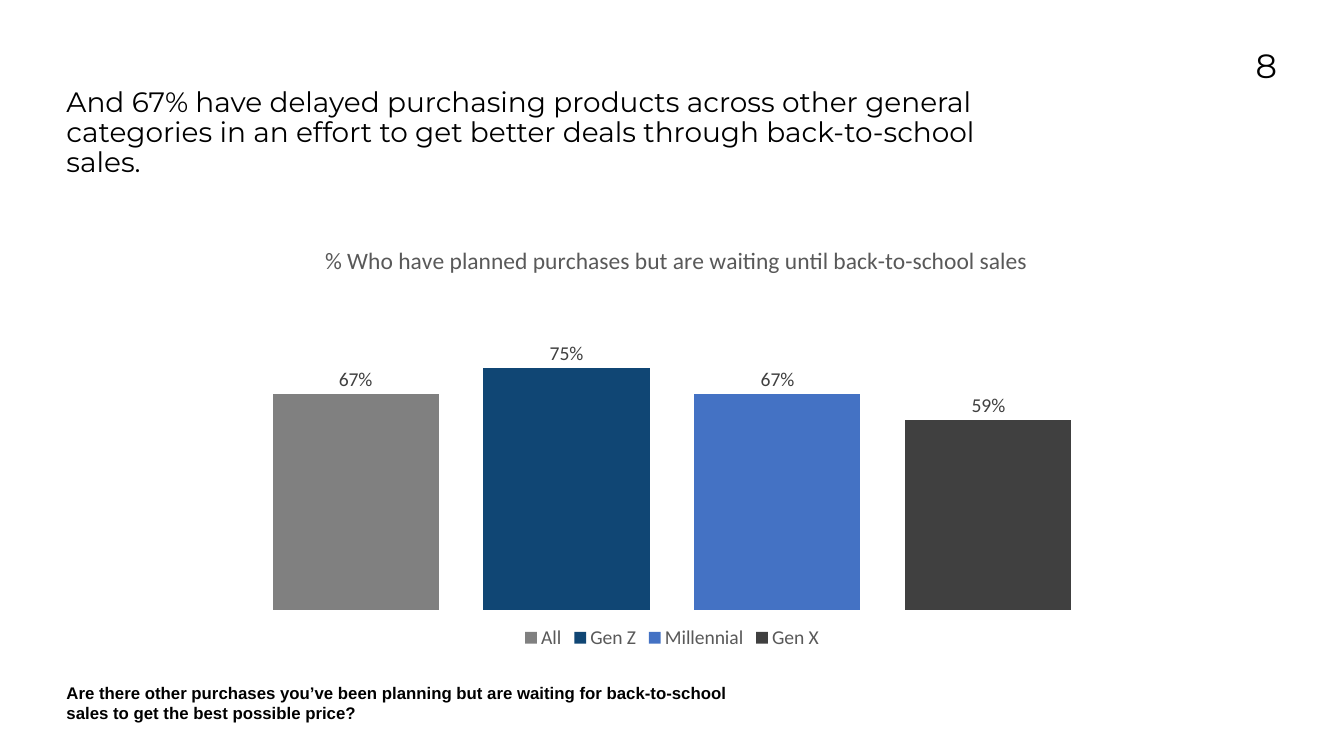
from dataclasses import dataclass

from lxml import etree
from pptx import Presentation
from pptx.chart.data import CategoryChartData
from pptx.dml.color import RGBColor
from pptx.enum.chart import XL_CHART_TYPE, XL_LABEL_POSITION, XL_LEGEND_POSITION
from pptx.enum.text import MSO_ANCHOR, MSO_AUTO_SIZE, PP_ALIGN
from pptx.oxml.ns import qn
from pptx.util import Cm, Pt

BLACK = RGBColor(0x00, 0x00, 0x00)
CHARCOAL = RGBColor(0x40, 0x40, 0x40)
TEXT_GRAY = RGBColor(0x59, 0x59, 0x59)
GRAY = RGBColor(0x80, 0x80, 0x80)
NAVY = RGBColor(0x10, 0x46, 0x74)
BLUE = RGBColor(0x44, 0x72, 0xC4)

MARGIN = 3.35


@dataclass
class Box:
    left: float
    top: float
    width: float
    height: float

    def lengths(self):
        return [Cm(v) for v in (self.left, self.top, self.width, self.height)]


@dataclass
class Group:
    name: str
    share: float
    color: RGBColor


GROUPS = [
    Group("All", 0.67, GRAY),
    Group("Gen Z", 0.75, NAVY),
    Group("Millennial", 0.67, BLUE),
    Group("Gen X", 0.59, CHARCOAL),
]


def set_font(font, color: RGBColor, **values) -> None:
    for name, value in values.items():
        setattr(font, name, value)
    font.color.rgb = color


def write_text(sp, box: Box, text: str, align=PP_ALIGN.LEFT, spacing=1.0, **font) -> None:
    sp.left, sp.top, sp.width, sp.height = box.lengths()
    tf = sp.text_frame
    frame_format = dict(
        margin_left=0, margin_top=0, margin_right=0, margin_bottom=0,
        word_wrap=True, auto_size=MSO_AUTO_SIZE.NONE, vertical_anchor=MSO_ANCHOR.TOP,
    )
    for name, value in frame_format.items():
        setattr(tf, name, value)
    p = tf.paragraphs[0]
    p.alignment, p.line_spacing = align, spacing
    r = p.add_run()
    r.text = text
    set_font(r.font, BLACK, **font)


def set_layout(parent, index: int, **values) -> None:
    """Place a chart part by hand, in fractions of the chart."""
    layout = parent.find(qn("c:layout"))
    if layout is None:
        layout = etree.Element(qn("c:layout"))
        parent.insert(index, layout)
    manual = etree.SubElement(layout, qn("c:manualLayout"))
    for name, value in values.items():
        etree.SubElement(manual, qn(f"c:{name}")).set("val", str(value))


def add_share_chart(slide, box: Box, title: str, groups: list[Group]) -> None:
    data = CategoryChartData(number_format="0%")
    data.categories = ["1"]
    for group in groups:
        data.add_series(group.name, [group.share])
    chart = slide.shapes.add_chart(
        XL_CHART_TYPE.COLUMN_CLUSTERED, *box.lengths(), data
    ).chart
    set_font(chart.font, BLACK, size=Pt(28), name="Calibri")

    tf = chart.chart_title.text_frame
    tf.text = title
    set_font(tf.paragraphs[0].runs[0].font, TEXT_GRAY,
             size=Pt(33.6), name="Calibri", bold=False)

    chart.has_legend = True
    chart.legend.position = XL_LEGEND_POSITION.BOTTOM
    chart.legend.include_in_layout = False
    set_font(chart.legend.font, TEXT_GRAY, size=Pt(28), name="Calibri")

    axis = chart.value_axis
    axis.minimum_scale, axis.maximum_scale = 0, 1
    axis.has_major_gridlines = False
    axis.visible = chart.category_axis.visible = False

    plot = chart.plots[0]
    plot.gap_width, plot.overlap, plot.vary_by_categories = 219, -27, False
    for series, group in zip(plot.series, groups):
        series.format.fill.solid()
        series.format.fill.fore_color.rgb = group.color
        labels = series.data_labels
        labels.show_value = True
        labels.position = XL_LABEL_POSITION.OUTSIDE_END
        set_font(labels.font, CHARCOAL, size=Pt(28), name="Calibri")

    c_chart = chart.element.find(qn("c:chart"))
    set_layout(c_chart.find(qn("c:title")), 1, xMode="edge", yMode="edge", x=0.21, y=0.04)
    set_layout(c_chart.find(qn("c:plotArea")), 0, layoutTarget="inner",
               xMode="edge", yMode="edge", x=0.02, y=0.15, w=0.96, h=0.75)


def main() -> None:
    prs = Presentation()
    prs.slide_width, prs.slide_height = Cm(67.74), Cm(38.1)
    slide = prs.slides.add_slide(prs.slide_layouts[5])

    add_share_chart(
        slide, Box(MARGIN, 11.2, 61.04, 21.74),
        "% Who have planned purchases but are waiting until back-to-school sales", GROUPS,
    )
    write_text(
        slide.shapes.title, Box(MARGIN, 4.45, 46.25, 5.28),
        "And 67% have delayed purchasing products across other general categories "
        "in an effort to get better deals through back-to-school sales.",
        spacing=0.9, size=Pt(40), name="Montserrat",
    )
    question = Box(MARGIN, 34.42, 33.71, 1.65)
    write_text(
        slide.shapes.add_textbox(*question.lengths()), question,
        "Are there other purchases you’ve been planning but are waiting for "
        "back-to-school sales to get the best possible price?",
        size=Pt(24), name="Arial", bold=True,
    )
    page_number = Box(58.65, 2.24, 5.72, 4.17)
    write_text(
        slide.shapes.add_textbox(*page_number.lengths()), page_number, "8",
        align=PP_ALIGN.RIGHT, size=Pt(48), name="Montserrat",
    )
    prs.save("out.pptx")


if __name__ == "__main__":
    main()
